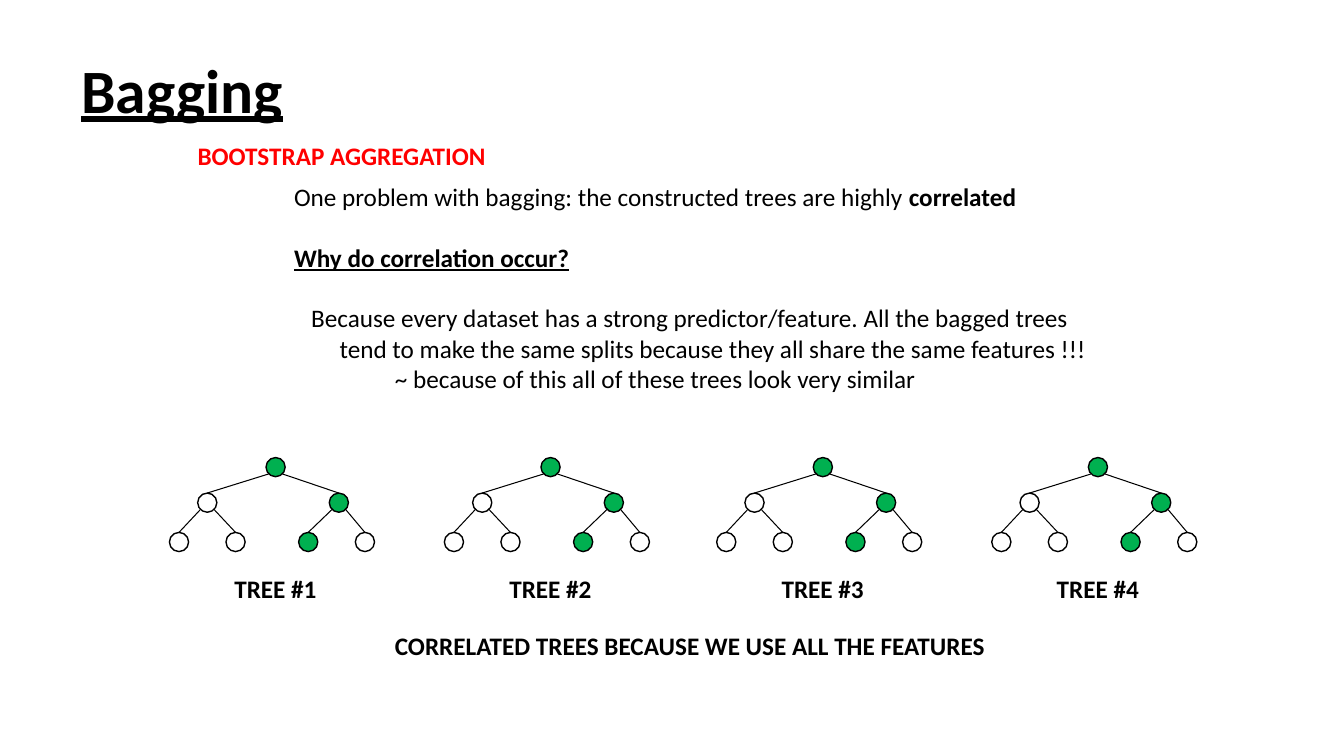
"""Build the slide on why bagged trees are correlated."""

import dataclasses
import typing

import lxml.etree
import pptx
import pptx.dml.color
import pptx.enum.shapes
import pptx.enum.text
import pptx.oxml.ns
import pptx.util

Pt = pptx.util.Pt
COLOURS = {"black": "000000", "red": "FF0000", "green": "00B050", "white": "FFFFFF"}
DIAMETER = 13.7
RADIUS = DIAMETER / 2
TREE_TOP = 326.8
TREE_LEFTS = (121, 317.4, 511.9, 708.4)


@dataclasses.dataclass(frozen=True)
class Span:
    """A run of text with its format."""

    text: str
    format: dict[str, typing.Any] = dataclasses.field(default_factory=dict)
    colour: str = "black"


@dataclasses.dataclass(frozen=True)
class Para:
    """A paragraph with its indent and the space before it."""

    spans: tuple[Span, ...]
    indent: float = 0
    before: float = 0


@dataclasses.dataclass(frozen=True)
class Label:
    """A text box with its place and paragraphs."""

    left: float
    top: float
    width: float
    height: float
    paras: tuple[Para, ...]
    wrap: bool = False


@dataclasses.dataclass(frozen=True)
class Node:
    """A tree node with its offset from the tree's top left corner."""

    left: float
    top: float
    fill: str
    parent: str = ""


NODES = {
    "root": Node(69, 0, "green"),
    "left": Node(20.2, 25.4, "white", "root"),
    "right": Node(114.2, 25.4, "green", "root"),
    "left left": Node(0, 53.5, "white", "left"),
    "left right": Node(40.4, 53.5, "white", "left"),
    "right left": Node(92.3, 53.5, "green", "right"),
    "right right": Node(132.8, 53.5, "white", "right"),
}


def bold_label(text: str, left: float, top: float, width: float, colour: str = "black") -> Label:
    """Describe a one-line bold label."""
    return Label(left, top, width, 29, (Para((Span(text, {"bold": True}, colour),)),))


LABELS = (
    bold_label("BOOTSTRAP AGGREGATION", 134, 96.6, 222.5, "red"),
    Label(203, 126, 587.5, 160, (
        Para((
            Span("One problem with bagging: the constructed trees are highly "),
            Span("correlated", {"bold": True}),
        )),
        Para((Span("Why do correlation occur?", {"bold": True, "underline": True}),), before=21.7),
        Para(
            (Span("Because every dataset has a strong predictor/feature. All the bagged trees"),),
            indent=12.2,
            before=21.7,
        ),
        Para(
            (Span("tend to make the same splits because they all share the same features !!!"),),
            indent=32.6,
        ),
        Para((Span("~ because of this all of these trees look very similar"),), indent=72),
    ), wrap=True),
    *(
        bold_label(f"TREE #{number}", left + 39.3, 406, 73.4)
        for number, left in enumerate(TREE_LEFTS, 1)
    ),
    bold_label("CORRELATED TREES BECAUSE WE USE ALL THE FEATURES", 275, 446.6, 440),
)


def rgb(name: str) -> pptx.dml.color.RGBColor:
    """Return the named colour."""
    return pptx.dml.color.RGBColor.from_string(COLOURS[name])


def apply_format(target: typing.Any, values: dict[str, typing.Any]) -> None:
    """Set each attribute in values on the target."""
    for name, value in values.items():
        setattr(target, name, value)


def add_span(para: typing.Any, span: Span, size: float = 18) -> None:
    """Append a formatted span to a paragraph."""
    run = para.add_run()
    run.text = span.text
    apply_format(run.font, {"name": "Calibri", "size": Pt(size), **span.format})
    run.font.color.rgb = rgb(span.colour)


def add_title(page: typing.Any, text: str) -> None:
    """Place and fill the title."""
    title = page.shapes.title
    apply_format(title, {"left": Pt(51), "top": Pt(14.4), "width": Pt(828), "height": Pt(104.4)})
    apply_format(title.text_frame, {
        "vertical_anchor": pptx.enum.text.MSO_ANCHOR.MIDDLE,
        "auto_size": pptx.enum.text.MSO_AUTO_SIZE.NONE,
    })
    para = title.text_frame.paragraphs[0]
    apply_format(para, {"alignment": pptx.enum.text.PP_ALIGN.LEFT, "line_spacing": 0.9})
    add_span(para, Span(text, {"bold": True, "underline": True}), 44)


def add_label(page: typing.Any, label: Label) -> None:
    """Draw a text box."""
    box = page.shapes.add_textbox(
        Pt(label.left), Pt(label.top), Pt(label.width), Pt(label.height)
    )
    frame = box.text_frame
    apply_format(frame, {
        "word_wrap": label.wrap,
        "auto_size": pptx.enum.text.MSO_AUTO_SIZE.SHAPE_TO_FIT_TEXT,
    })
    for index, item in enumerate(label.paras):
        para = frame.add_paragraph() if index else frame.paragraphs[0]
        if item.indent:
            para._p.get_or_add_pPr().set("marL", str(Pt(item.indent)))
        if item.before:
            para.space_before = Pt(item.before)
        for span in item.spans:
            add_span(para, span)


def add_node(page: typing.Any, node: Node, tree_left: float) -> None:
    """Draw one tree node."""
    circle = page.shapes.add_shape(
        pptx.enum.shapes.MSO_SHAPE.OVAL,
        Pt(tree_left + node.left), Pt(TREE_TOP + node.top), Pt(DIAMETER), Pt(DIAMETER),
    )
    circle.shadow.inherit = False
    circle.fill.solid()
    circle.fill.fore_color.rgb = rgb(node.fill)
    circle.line.color.rgb = rgb("black")
    circle.line.width = Pt(1)


def add_branch(page: typing.Any, parent: Node, child: Node, tree_left: float) -> None:
    """Join the lower side of a parent to the top of its child."""
    reach = RADIUS * 0.71
    side = reach if child.left > parent.left else -reach
    branch = page.shapes.add_connector(
        pptx.enum.shapes.MSO_CONNECTOR.STRAIGHT,
        Pt(tree_left + parent.left + RADIUS + side), Pt(TREE_TOP + parent.top + RADIUS + reach),
        Pt(tree_left + child.left + RADIUS), Pt(TREE_TOP + child.top),
    )
    branch.line.color.rgb = rgb("black")
    branch.line.width = Pt(0.75)
    lxml.etree.SubElement(branch._element.spPr, pptx.oxml.ns.qn("a:effectLst"))


def add_tree(page: typing.Any, tree_left: float) -> None:
    """Draw the nodes and branches of one tree."""
    for node in NODES.values():
        add_node(page, node, tree_left)
    for node in NODES.values():
        if node.parent:
            add_branch(page, NODES[node.parent], node, tree_left)


def main() -> None:
    """Build and save the deck."""
    deck = pptx.Presentation()
    apply_format(deck, {"slide_width": Pt(960), "slide_height": Pt(540)})
    page = deck.slides.add_slide(deck.slide_layouts.get_by_name("Title Only"))
    add_title(page, "Bagging")
    for tree_left in TREE_LEFTS:
        add_tree(page, tree_left)
    for label in LABELS:
        add_label(page, label)
    deck.save("out.pptx")


if __name__ == "__main__":
    main()
